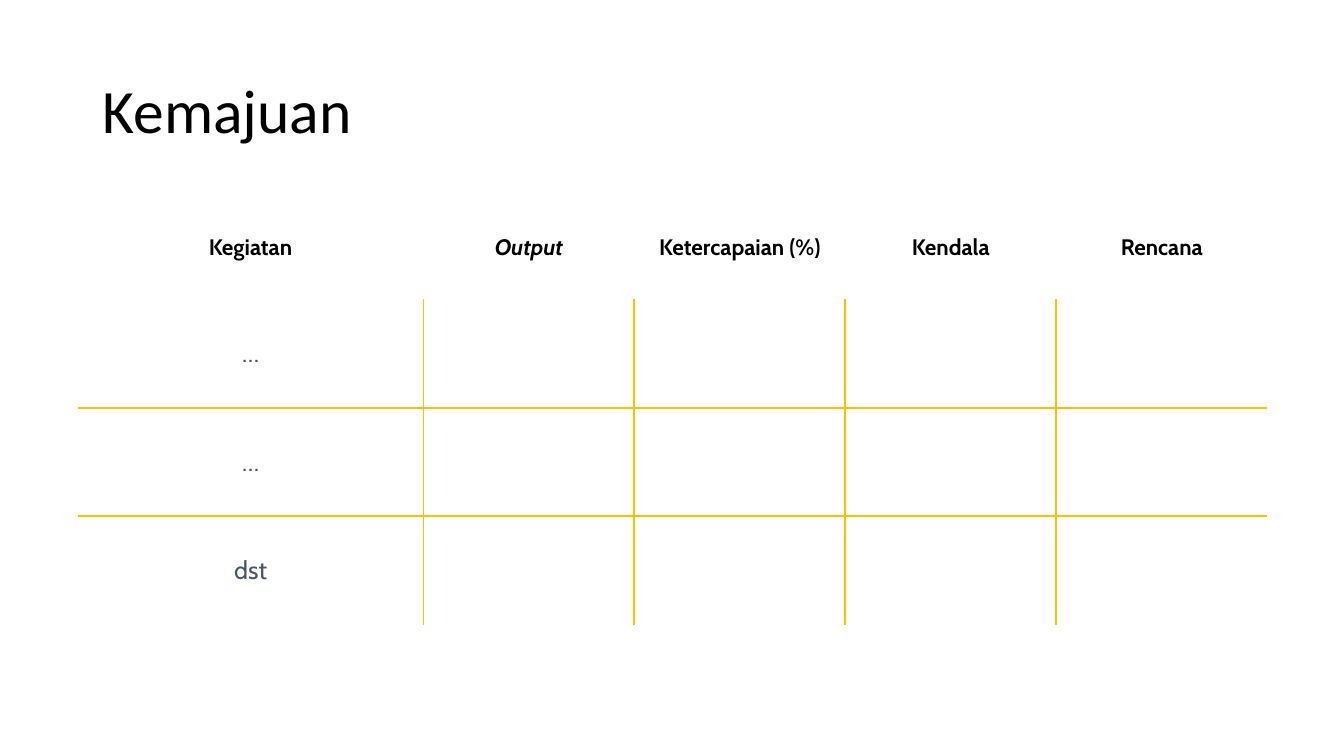
from lxml import etree
from pptx import Presentation
from pptx.dml.color import RGBColor
from pptx.enum import text
from pptx.oxml import ns
from pptx.util import Inches, Pt

BLACK = RGBColor(0x00, 0x00, 0x00)
SLATE = RGBColor(0x44, 0x54, 0x6A)
GOLD = RGBColor(0xFF, 0xC0, 0x00)

HEADINGS = ["Kegiatan", "Output", "Ketercapaian (%)", "Kendala", "Rencana"]
ACTIVITIES = ["…", "…", "dst"]
ACTIVITY_WIDTH = 3.43
HEADING_HEIGHT = 1.03


def style_text(paragraph, font_name, size, color, bold=False, italic=False):
    for run in paragraph.runs:
        run.font.name = font_name
        run.font.size = Pt(size)
        run.font.color.rgb = color
        run.font.bold = bold
        run.font.italic = italic


def set_borders(cell, gold_sides):
    properties = cell._tc.get_or_add_tcPr()
    for position, side in enumerate("LRTB"):
        border = etree.Element(ns.qn(f"a:ln{side}"), w=str(Pt(1.5)))
        if side in gold_sides:
            fill = etree.SubElement(border, ns.qn("a:solidFill"))
            etree.SubElement(fill, ns.qn("a:srgbClr"), val=str(GOLD))
        else:
            etree.SubElement(border, ns.qn("a:noFill"))
        properties.insert(position, border)


def inner_sides(row, column, last_row, last_column):
    if row == 0:
        return ""
    shown = {"L": column > 0, "R": column < last_column,
             "T": row > 1, "B": row < last_row}
    return "".join(side for side in shown if shown[side])


def add_title(slide, left, top, width, height):
    title = slide.shapes.add_textbox(
        Inches(left), Inches(top), Inches(width), Inches(height))
    frame = title.text_frame
    frame.word_wrap = True
    frame.vertical_anchor = text.MSO_ANCHOR.MIDDLE
    frame.text = "Kemajuan"
    frame.paragraphs[0].line_spacing = 0.9
    style_text(frame.paragraphs[0], "Calibri", 44, BLACK)


def add_progress_table(slide, left, top, width, height):
    last_row, last_column = len(ACTIVITIES), len(HEADINGS) - 1
    progress = slide.shapes.add_table(
        last_row + 1, last_column + 1,
        Inches(left), Inches(top), Inches(width), Inches(height)).table
    progress.first_row = False
    progress.horz_banding = False

    for index, column in enumerate(progress.columns):
        column.width = Inches(
            (width - ACTIVITY_WIDTH) / last_column if index else ACTIVITY_WIDTH)
    for index, row in enumerate(progress.rows):
        row.height = Inches(
            (height - HEADING_HEIGHT) / last_row if index else HEADING_HEIGHT)

    for row in range(last_row + 1):
        for column in range(last_column + 1):
            cell = progress.cell(row, column)
            cell.fill.background()
            cell.vertical_anchor = text.MSO_ANCHOR.MIDDLE
            cell.margin_left = cell.margin_right = Inches(0.1)
            cell.margin_top = cell.margin_bottom = Inches(0.07)
            set_borders(cell, inner_sides(row, column, last_row, last_column))
            paragraph = cell.text_frame.paragraphs[0]
            paragraph.alignment = text.PP_ALIGN.CENTER
            if row == 0:
                heading = HEADINGS[column]
                paragraph.text = heading
                style_text(paragraph, "Cabin", 16, BLACK,
                           bold=True, italic=heading == "Output")
            elif column == 0:
                paragraph.text = ACTIVITIES[row - 1]
                style_text(paragraph, "Cabin", 18, SLATE)


def main():
    deck = Presentation()
    deck.slide_width = Inches(13.33)
    deck.slide_height = Inches(7.5)
    slide = deck.slides.add_slide(deck.slide_layouts[6])
    add_title(slide, 0.92, 0.4, 11.5, 1.45)
    add_progress_table(slide, 0.77, 1.94, 11.8, 4.26)
    deck.save("out.pptx")


if __name__ == "__main__":
    main()
